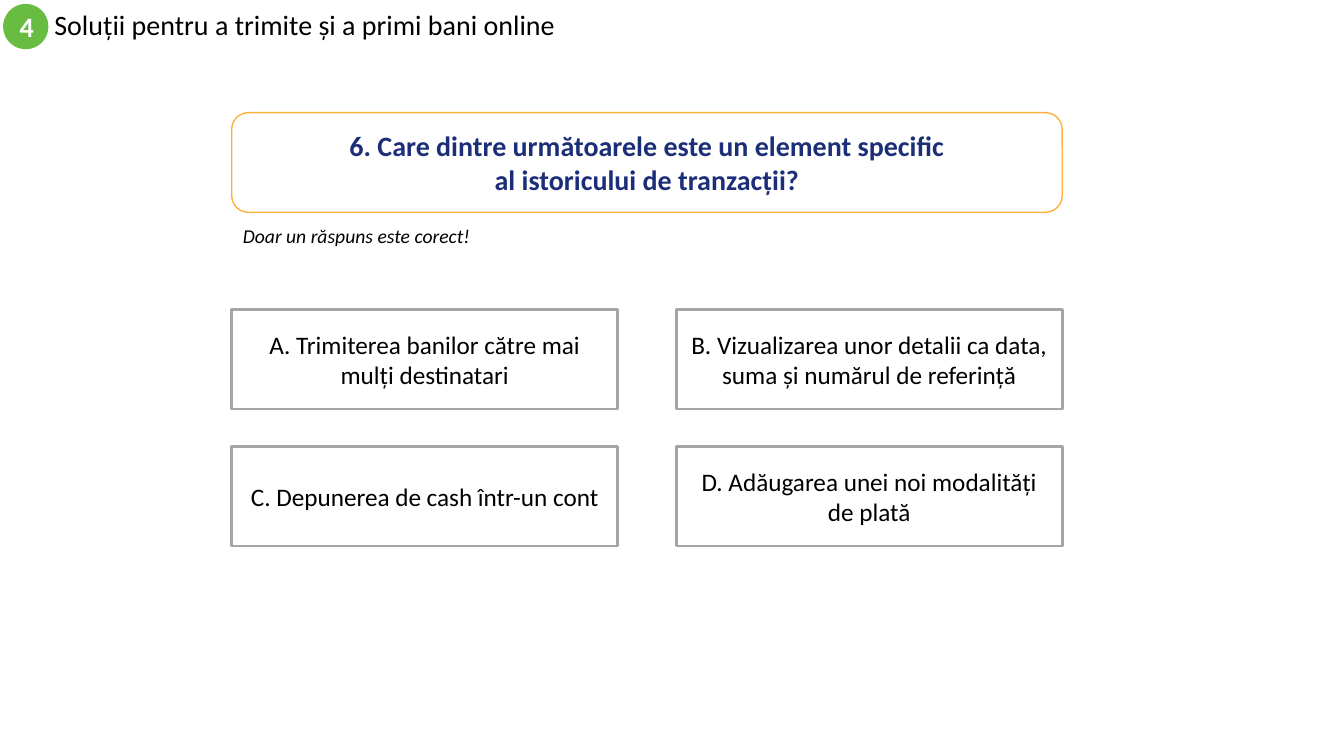
"""Build a quiz slide with one question and four answers."""
from pptx import Presentation
from pptx.dml.color import RGBColor
from pptx.enum.shapes import MSO_SHAPE
from pptx.enum.text import MSO_ANCHOR, PP_ALIGN
from pptx.util import Cm, Pt

OVAL, RECT, ROUND = MSO_SHAPE.OVAL, MSO_SHAPE.RECTANGLE, MSO_SHAPE.ROUNDED_RECTANGLE
MIDDLE, TOP = MSO_ANCHOR.MIDDLE, MSO_ANCHOR.TOP
CENTER, LEFT = PP_ALIGN.CENTER, PP_ALIGN.LEFT
FONT = "Calibri"
COLORS = {
    "green": "68BC42",
    "orange": "FCB13A",
    "navy": "1C2E78",
    "gray": "A5A5A5",
    "black": "000000",
    "white": "FFFFFF",
}
ANSWERS = [
    "A. Trimiterea banilor către mai mulți destinatari",
    "B. Vizualizarea unor detalii ca data, suma și numărul de referință",
    "C. Depunerea de cash într-un cont",
    "D. Adăugarea unei noi modalități de plată",
]


def color(name):
    return RGBColor.from_string(COLORS[name])


def write(shape, text, size, ink="black", align=CENTER, anchor=MIDDLE,
          bold=False, italic=False, spacing=None):
    frame = shape.text_frame
    frame.word_wrap = True
    frame.vertical_anchor = anchor
    frame.text = text
    for para in frame.paragraphs:
        para.alignment = align
        para.line_spacing = spacing
        font = para.font
        font.name, font.size = FONT, Pt(size)
        font.bold, font.italic = bold, italic
        font.color.rgb = color(ink)


def add_box(slide, kind, place, fill="white", line=None, width=1):
    shape = slide.shapes.add_shape(kind, *map(Cm, place))
    shape.shadow.inherit = False
    shape.fill.solid()
    shape.fill.fore_color.rgb = color(fill)
    if line:
        shape.line.color.rgb = color(line)
        shape.line.width = Pt(width)
    else:
        shape.line.fill.background()
    return shape


def add_label(slide, place, text, size, **style):
    label = slide.shapes.add_textbox(*map(Cm, place))
    write(label, text, size, align=LEFT, **style)


def add_header(slide):
    badge = add_box(slide, OVAL, (0.08, 0.1, 1.14, 1.14), "green")
    write(badge, "4", 20, "white", bold=True)
    add_label(slide, (1.12, 0.1, 20.32, 1.14),
              "Soluții pentru a trimite și a primi bani online", 20, spacing=0.9)


def add_question(slide):
    box = add_box(slide, ROUND, (5.84, 2.84, 20.93, 2.51), line="orange")
    write(box, "6. Care dintre următoarele este un element specific\n"
               "al istoricului de tranzacții?", 20, "navy", bold=True)
    add_label(slide, (5.87, 5.51, 7.19, 0.86), "Doar un răspuns este corect!",
              14, anchor=TOP, italic=True)


def add_answers(slide):
    for index, text in enumerate(ANSWERS):
        row, col = divmod(index, 2)
        place = (5.84 + col * 11.2, 7.8 + row * 3.45, 9.73, 2.51)
        write(add_box(slide, RECT, place, line="gray", width=2), text, 18)


def main():
    deck = Presentation()
    deck.slide_width, deck.slide_height = Cm(33.87), Cm(19.05)
    slide = deck.slides.add_slide(deck.slide_layouts[6])
    add_header(slide)
    add_question(slide)
    add_answers(slide)
    deck.save("out.pptx")


if __name__ == "__main__":
    main()
